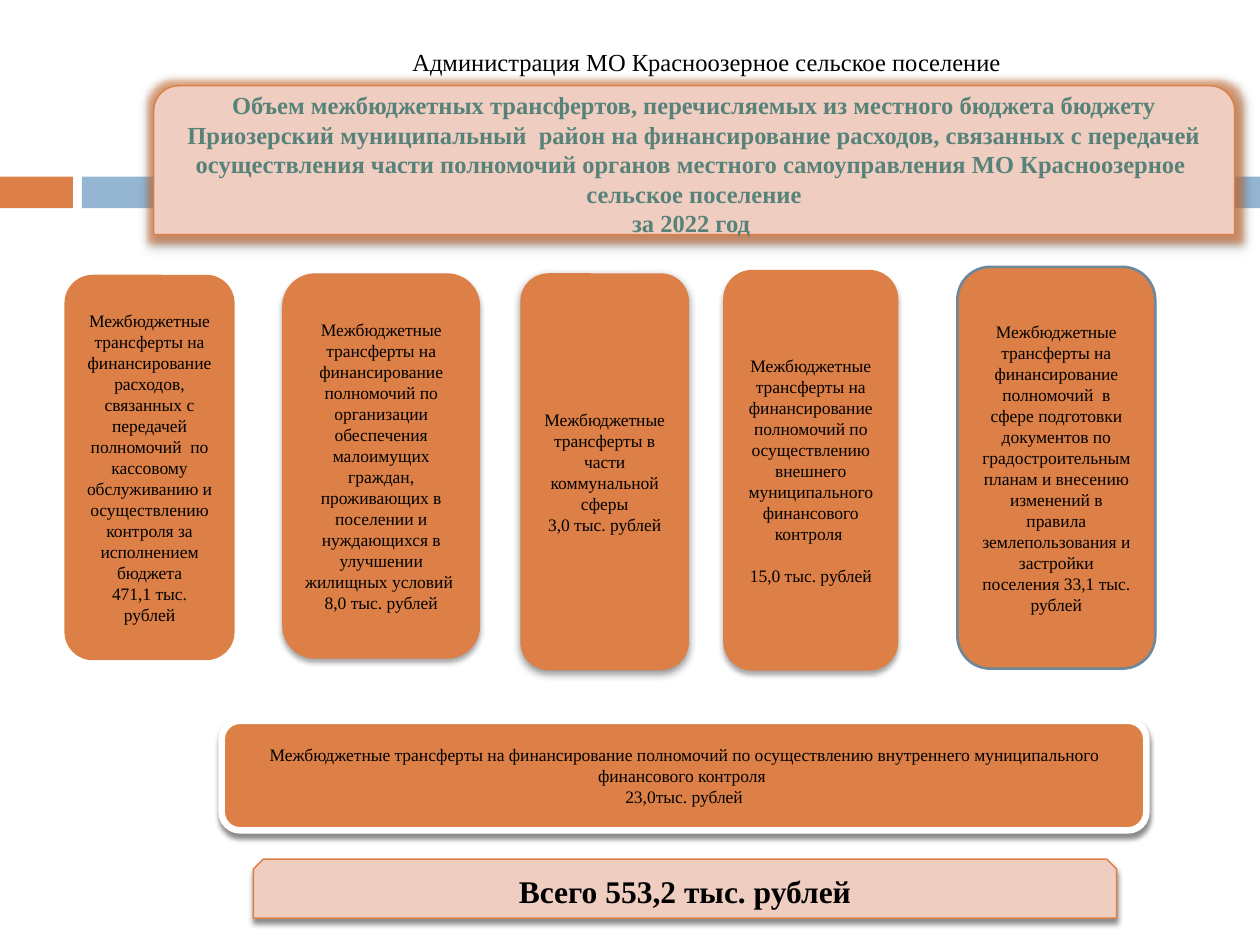
import pptx
import pptx.util
import pptx.dml.color
import pptx.enum.shapes
import pptx.enum.text
import pptx.oxml.ns
from lxml import etree

Cm, Pt = pptx.util.Cm, pptx.util.Pt
SHAPE = pptx.enum.shapes.MSO_SHAPE
qn = pptx.oxml.ns.qn

COLORS = {
    "orange": "DD8047", "blue": "94B6D2", "pink": "EFCDC1", "green": "578279",
    "slate": "6D879B", "white": "FFFFFF", "black": "000000",
}

# Content
ADMINISTRATION = "Администрация МО Красноозерное сельское поселение"
HEADING = [
    "Объем межбюджетных трансфертов, перечисляемых из местного бюджета бюджету "
    "Приозерский муниципальный  район на финансирование расходов, связанных с передачей "
    "осуществления части полномочий органов местного самоуправления МО Красноозерное  "
    "сельское поселение",
    "за 2022 год ",
]
INTERNAL_CONTROL = [
    "Межбюджетные трансферты на финансирование полномочий по осуществлению "
    "внутреннего муниципального финансового контроля ",
    "23,0тыс. рублей",
]
TOTAL = "Всего 553,2 тыс. рублей"

# Shadows: opacity %, blur pt, distance pt
LIGHT, MEDIUM, STRONG = (35, 3, 2), (43, 5, 2), (45, 3, 2.4)

# Transfers: box in cm, paragraphs, format of the box, gap before the amount in pt
CARD = SHAPE.FLOWCHART_ALTERNATE_PROCESS
TRANSFERS = [
    ((1.3, 5.54, 3.43, 7.77), [
        "Межбюджетные трансферты на финансирование расходов, связанных с передачей "
        "полномочий  по кассовому обслуживанию и осуществлению контроля за исполнением бюджета",
        "471,1 тыс. рублей"], {"kind": CARD}, 0),
    ((5.69, 5.51, 3.99, 7.77), [
        "Межбюджетные трансферты на",
        "финансирование полномочий по организации обеспечения малоимущих граждан, "
        "проживающих в поселении и нуждающихся в улучшении жилищных условий ",
        "8,0 тыс. рублей"], {"kind": CARD, "shadow": LIGHT}, 0),
    ((10.49, 5.51, 3.4, 8), [
        "Межбюджетные трансферты в части коммунальной сферы",
        "3,0 тыс. рублей"], {"kind": CARD, "shadow": MEDIUM}, 0),
    ((14.58, 5.44, 3.53, 8.08), [
        "Межбюджетные трансферты на финансирование полномочий по осуществлению "
        "внешнего муниципального финансового контроля ",
        "15,0 тыс. рублей"], {"kind": CARD, "shadow": LIGHT}, 12),
    ((19.3, 5.38, 3.99, 8.1), [
        "Межбюджетные трансферты на финансирование полномочий  в сфере подготовки "
        "документов по градостроительным планам и внесению изменений в правила "
        "землепользования и застройки поселения 33,1 тыс. рублей"],
        {"kind": SHAPE.ROUNDED_RECTANGLE, "line": ("slate", 1.5)}, 0),
]


def rgb(color):
    return pptx.dml.color.RGBColor.from_string(COLORS[color])


def add_effect(shape, tag, color, opacity, **attributes):
    effects = shape._element.spPr.find(qn("a:effectLst"))
    effect = etree.SubElement(effects, qn(tag), {k: str(v) for k, v in attributes.items()})
    tint = etree.SubElement(effect, qn("a:srgbClr"), val=COLORS[color])
    etree.SubElement(tint, qn("a:alpha"), val=str(opacity * 1000))


def add_box(slide, box, kind=SHAPE.RECTANGLE, fill="orange", line=None, glow=None, shadow=None):
    shape = slide.shapes.add_shape(kind, *map(Cm, box))
    shape.shadow.inherit = False
    shape.fill.solid()
    shape.fill.fore_color.rgb = rgb(fill)
    if line:
        color, width = line
        shape.line.color.rgb = rgb(color)
        shape.line.width = Pt(width)
    else:
        shape.line.fill.background()
    if glow:
        color, opacity, radius = glow
        add_effect(shape, "a:glow", color, opacity, rad=Pt(radius))
    if shadow:
        opacity, blur, distance = shadow
        add_effect(shape, "a:outerShdw", "black", opacity, blurRad=Pt(blur),
                   dist=Pt(distance), dir=90 * 60000, rotWithShape=0)
    return shape


def write(shape, paragraphs, size=10, color="black", bold=False, last_gap=0):
    frame = shape.text_frame
    frame.word_wrap = True
    frame.vertical_anchor = pptx.enum.text.MSO_ANCHOR.MIDDLE
    for number, text in enumerate(paragraphs):
        paragraph = frame.add_paragraph() if number else frame.paragraphs[0]
        paragraph.alignment = pptx.enum.text.PP_ALIGN.CENTER
        run = paragraph.add_run()
        run.text = text
        run.font.name = "Times New Roman"
        run.font.size = Pt(size)
        run.font.bold = bold
        run.font.color.rgb = rgb(color)
    if last_gap:
        paragraph.space_before = Pt(last_gap)


def main():
    deck = pptx.Presentation()
    deck.slide_width, deck.slide_height = Cm(25.4), Cm(19.05)
    slide = deck.slides.add_slide(deck.slide_layouts[6])

    # Side bars
    add_box(slide, (0, 3.56, 1.47, 0.64))
    add_box(slide, (1.65, 3.56, 23.75, 0.64), fill="blue")

    # Administration and heading
    administration = slide.shapes.add_textbox(*map(Cm, (3.99, 0.74, 20.52, 0.99)))
    write(administration, [ADMINISTRATION], size=14)
    heading = add_box(slide, (3.1, 1.73, 21.79, 3), SHAPE.ROUND_2_SAME_RECTANGLE, "pink",
                      line=("orange", 0.79), glow=("orange", 60, 8), shadow=MEDIUM)
    write(heading, HEADING, size=14, color="green", bold=True)

    # Transfers by purpose
    for box, paragraphs, style, gap in TRANSFERS:
        write(add_box(slide, box, **style), paragraphs, last_gap=gap)

    # Internal control and total
    internal_control = add_box(slide, (4.47, 14.53, 18.64, 2.21), SHAPE.ROUNDED_RECTANGLE,
                               line=("white", 3.75), shadow=STRONG)
    write(internal_control, INTERNAL_CONTROL)
    total = add_box(slide, (5.11, 17.32, 17.4, 1.19), SHAPE.SNIP_2_SAME_RECTANGLE, "pink",
                    line=("orange", 0.79), shadow=STRONG)
    write(total, [TOTAL], size=18, bold=True)

    deck.save("out.pptx")


if __name__ == "__main__":
    main()
